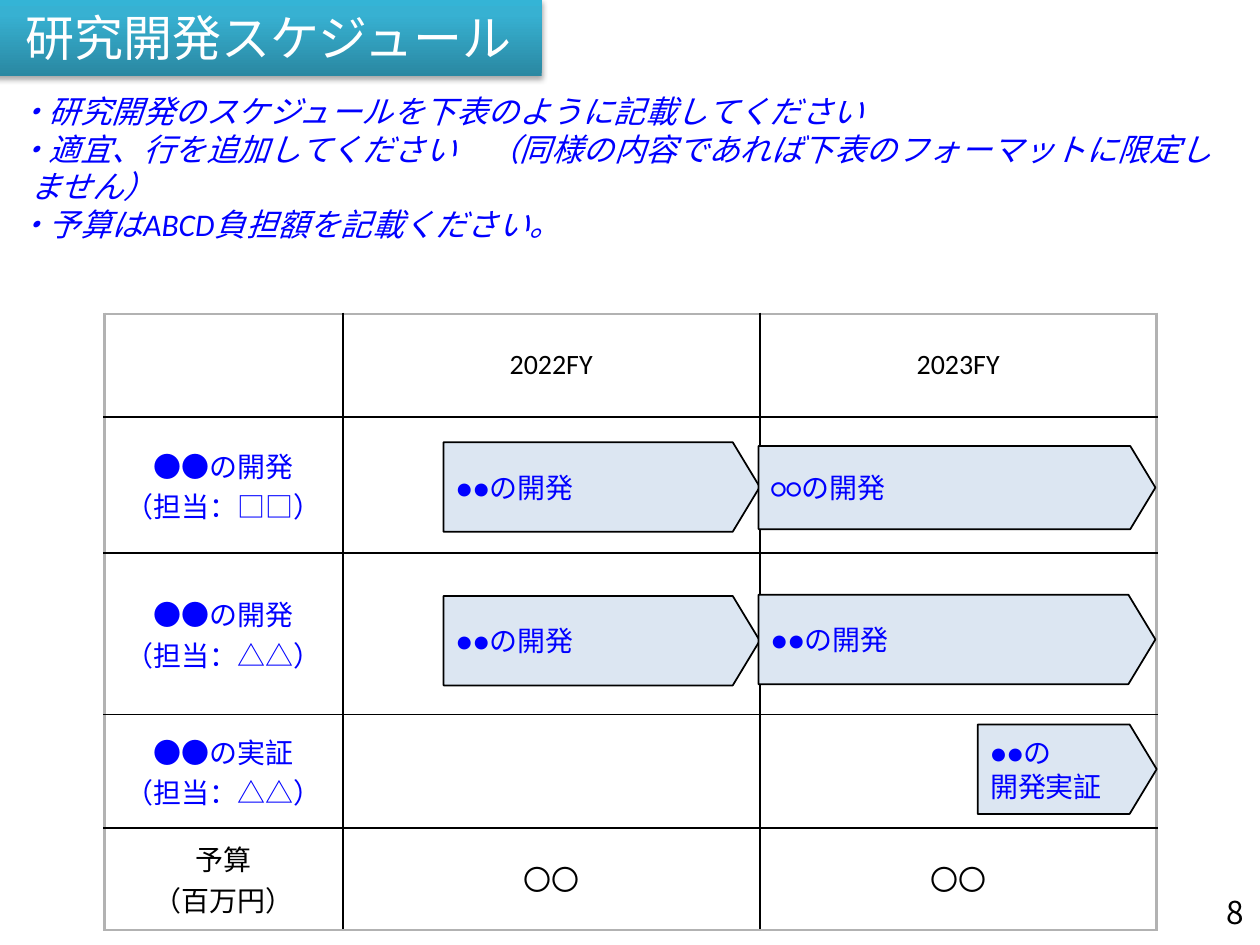
from pptx import Presentation, oxml
from pptx import util as u
from pptx.dml.color import RGBColor
from pptx.enum import shapes, text

BLUE, BLACK, WHITE, GREY, PALE = "0000FF", "000000", "FFFFFF", "B2B2B2", "DCE6F2"
LATIN, JAPANESE = "Calibri", "Noto Sans CJK JP"
NS = 'xmlns:a="http://schemas.openxmlformats.org/drawingml/2006/main"'
CENTER, LEFT, RIGHT = text.PP_ALIGN.CENTER, text.PP_ALIGN.LEFT, text.PP_ALIGN.RIGHT
MIDDLE, TOP = text.MSO_ANCHOR.MIDDLE, text.MSO_ANCHOR.TOP


def rgb(value):
    """Turn a hex string into a colour."""
    return RGBColor.from_string(value)


def inches(*lengths):
    """Turn numbers into lengths in inches."""
    return [u.Inches(length) for length in lengths]


class SchedulePage:
    """Draw the parts of the schedule on one page."""

    def __init__(self, page):
        """Keep the page."""
        self.page = page

    def set_words(self, frame, words, size=16, font=LATIN, color=BLUE, align=LEFT,
                  anchor=MIDDLE, italic=False, hanging=False):
        """Fill a text frame and format its runs."""
        frame.text = words
        frame.vertical_anchor = anchor
        for para in frame.paragraphs:
            para.alignment = align
            if hanging:
                properties = para._p.get_or_add_pPr()
                properties.set("marL", str(u.Inches(0.1)))
                properties.set("indent", str(u.Inches(-0.1)))
            for span in para.runs:
                span.font.size = u.Pt(size)
                span.font.name = font
                span.font.italic = italic
                span.font.color.rgb = rgb(color)
                span._r.get_or_add_rPr().find(oxml.ns.qn("a:latin")).addnext(
                    oxml.parse_xml(f'<a:ea {NS} typeface="{font}"/>'))

    def title(self, words, left, top, width, height):
        """Place the title on a shaded banner."""
        box = self.page.shapes.title
        box.left, box.top, box.width, box.height = inches(left, top, width, height)
        stops = "".join(
            f'<a:gs pos="{place * 1000}"><a:srgbClr val="{color}"/></a:gs>'
            for place, color in ((0, "2A88A2"), (80, "37B1D2"), (100, "34B4D6")))
        properties = box._element.spPr
        properties.append(oxml.parse_xml(
            f'<a:gradFill {NS} rotWithShape="1"><a:gsLst>{stops}</a:gsLst>'
            '<a:lin ang="16200000" scaled="0"/></a:gradFill>'))
        properties.append(oxml.parse_xml(
            f'<a:effectLst {NS}><a:outerShdw blurRad="{u.Pt(3.1)}" dist="{u.Pt(1.8)}" '
            'dir="5400000" rotWithShape="0"><a:srgbClr val="000000">'
            '<a:alpha val="35000"/></a:srgbClr></a:outerShdw></a:effectLst>'))
        self.set_words(box.text_frame, words, 28, color=WHITE, align=CENTER)

    def label(self, words, left, top, width, height, wrap=True, margin=None, **style):
        """Add a text box."""
        box = self.page.shapes.add_textbox(*inches(left, top, width, height))
        frame = box.text_frame
        frame.word_wrap = wrap
        if margin is not None:
            frame.margin_left = frame.margin_right = u.Inches(margin)
            frame.margin_top = frame.margin_bottom = u.Inches(margin)
        self.set_words(frame, words, **style)

    def arrow(self, words, left, top, width, height):
        """Add a task arrow."""
        box = self.page.shapes.add_shape(
            shapes.MSO_SHAPE.PENTAGON, *inches(left, top, width, height))
        box.adjustments[0] = 0.302
        box.shadow.inherit = False
        box.fill.solid()
        box.fill.fore_color.rgb = rgb(PALE)
        box.line.color.rgb = rgb(BLACK)
        box.line.width = u.Pt(1)
        self.set_words(box.text_frame, words, hanging=True)

    def borders(self, cell, outer):
        """Draw cell borders, grey on the outer sides."""
        properties = cell._tc.get_or_add_tcPr()
        for index, side in enumerate("LRTB"):
            color = GREY if side in outer else BLACK
            width = 1.5 if side in "LR" or side in outer else 1
            properties.insert(index, oxml.parse_xml(
                f'<a:ln{side} {NS} w="{u.Pt(width)}"><a:solidFill>'
                f'<a:srgbClr val="{color}"/></a:solidFill></a:ln{side}>'))

    def table(self, rows, left, top, widths, heights):
        """Add the schedule grid."""
        grid = self.page.shapes.add_table(
            len(rows), len(widths), *inches(left, top, sum(widths), sum(heights))).table
        grid.first_row = grid.horz_banding = False
        for column, width in zip(grid.columns, widths):
            column.width = u.Inches(width)
        last_row, last_column = len(rows) - 1, len(widths) - 1
        for r, (height, row) in enumerate(zip(heights, rows)):
            grid.rows[r].height = u.Inches(height)
            for c, words in enumerate(row):
                cell = grid.cell(r, c)
                cell.margin_left = cell.margin_right = 0
                cell.margin_top = cell.margin_bottom = 0
                cell.vertical_anchor = MIDDLE
                cell.fill.background()
                outer = [side for side, edge in zip("LRTB", (
                    c == 0, c == last_column, r == 0, r == last_row)) if edge]
                self.borders(cell, outer)
                if words:
                    self.set_words(cell.text_frame, words, align=CENTER,
                                   font=LATIN if r == 0 else JAPANESE,
                                   color=BLACK if r in (0, last_row) else BLUE)


def main():
    """Build the schedule slide."""
    deck = Presentation()
    deck.slide_width, deck.slide_height = inches(10, 7.5)
    draw = SchedulePage(deck.slides.add_slide(deck.slide_layouts[5]))
    draw.title("研究開発スケジュール", -0.04, -0.01, 4.34, 0.61)
    draw.table([
        ("", "2022FY", "2023FY"),
        ("●●の開発\n（担当：□□）", "", ""),
        ("●●の開発\n（担当：△△）", "", ""),
        ("●●の実証\n（担当：△△）", "", ""),
        ("予算\n（百万円）", "〇〇", "〇〇"),
    ], 0.83, 2.49, (1.89, 3.31, 3.15), (0.82, 1.08, 1.28, 0.9, 0.81))
    for task in (
        ("●●の開発", 3.52, 3.51, 2.51, 0.71),
        ("○○の開発", 6.02, 3.54, 3.15, 0.66),
        ("●●の開発", 3.52, 4.73, 2.51, 0.71),
        ("●●の開発", 6.02, 4.72, 3.15, 0.71),
        ("●●の\n開発実証", 7.76, 5.75, 1.42, 0.71),
    ):
        draw.arrow(*task)
    draw.label("8", 9.29, 7.11, 0.58, 0.25, wrap=False, margin=0, size=18,
               font=JAPANESE, color=BLACK, align=RIGHT)
    draw.label("・研究開発のスケジュールを下表のように記載してください\n"
               "・適宜、行を追加してください　（同様の内容であれば下表のフォーマットに限定しません）\n"
               "・予算はABCD負担額を記載ください。",
               0.04, 0.68, 9.83, 1.01, size=18, anchor=TOP, italic=True, hanging=True)
    deck.save("out.pptx")


if __name__ == "__main__":
    main()
